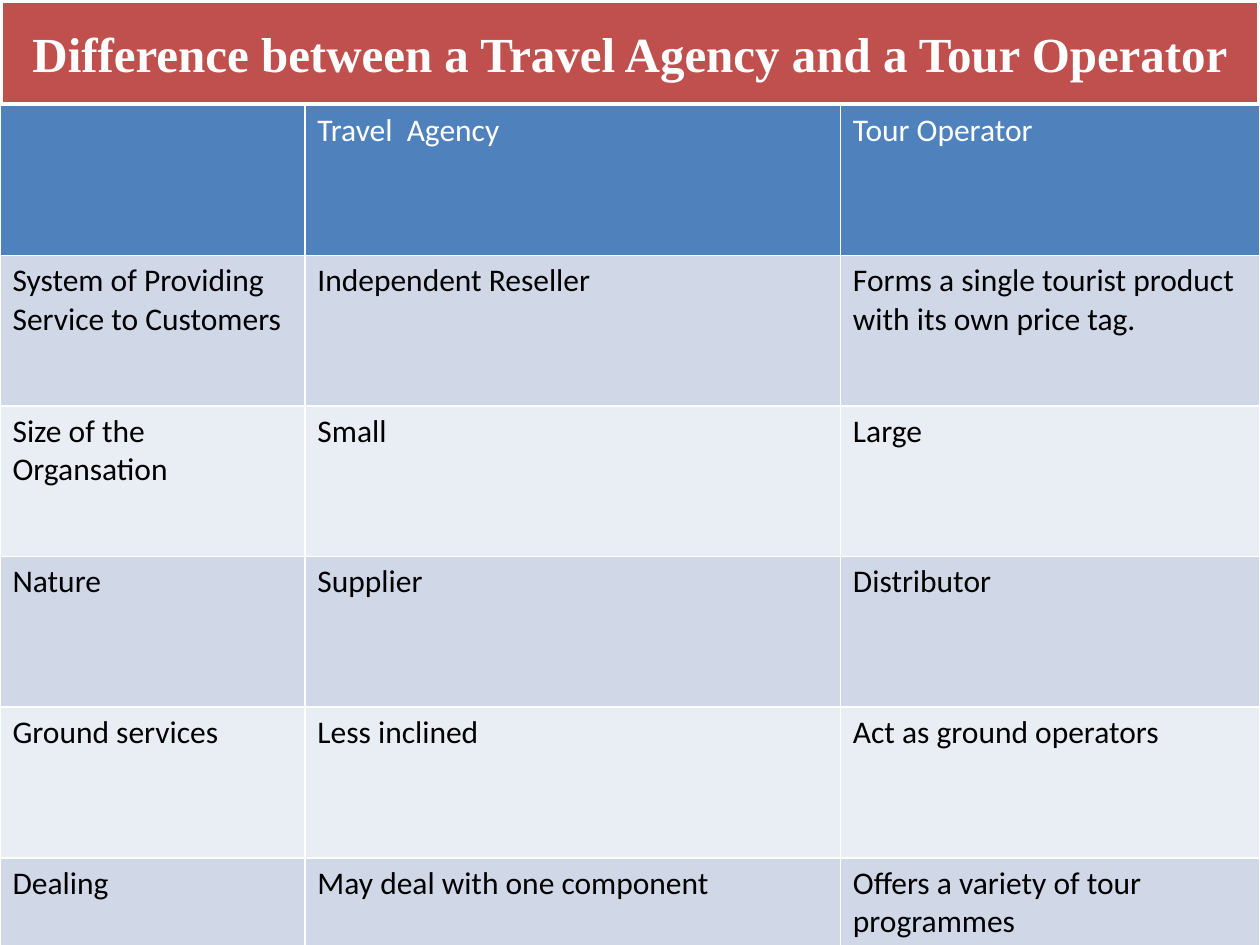
from lxml.etree import SubElement
from pptx import Presentation
from pptx.dml.color import RGBColor
from pptx.enum.shapes import MSO_SHAPE
from pptx.enum.text import MSO_ANCHOR, PP_ALIGN
from pptx.oxml.ns import qn
from pptx.util import Inches, Pt

THEME = {
    "white": RGBColor.from_string("FFFFFF"),
    "black": RGBColor.from_string("000000"),
    "banner": RGBColor.from_string("C0504D"),
    "header": RGBColor.from_string("4F81BD"),
    "bands": [RGBColor.from_string("E9EDF4"), RGBColor.from_string("D0D8E8")],
    "title_font": "Times New Roman",
    "body_font": "Calibri",
    "title_size": Pt(28),
    "body_size": Pt(18),
}

ROWS = [
    ("", "Travel  Agency", "Tour Operator"),
    ("System of Providing Service to Customers", "Independent Reseller",
     "Forms a single tourist product with its own price tag."),
    ("Size of the Organsation", "Small", "Large"),
    ("Nature", "Supplier", "Distributor"),
    ("Ground services", "Less inclined", "Act as ground operators"),
    ("Dealing", "May deal with one component", "Offers a variety of tour programmes"),
]
COLUMN_SHARES = (0.242, 0.425, 0.333)


def write(frame, text, *, font, size, color, bold=False, align=PP_ALIGN.LEFT):
    paragraph = frame.paragraphs[0]
    paragraph.alignment = align
    # The paragraph font also sets the height of an empty cell
    targets = [paragraph.font]
    if text:
        run = paragraph.add_run()
        run.text = text
        targets.append(run.font)
    for target in targets:
        target.name, target.size, target.bold = font, size, bold
        target.color.rgb = color


deck = Presentation()
deck.slide_width, deck.slide_height = Inches(10), Inches(7.5)
slide = deck.slides.add_slide(deck.slide_layouts[6])
width = deck.slide_width
banner_height = deck.slide_height // 9
row_height = Inches(7.17) // len(ROWS)

# Title banner
banner = slide.shapes.add_shape(MSO_SHAPE.RECTANGLE, 0, 0, width, banner_height)
banner.fill.solid()
banner.fill.fore_color.rgb = THEME["banner"]
banner.line.color.rgb = THEME["white"]
banner.line.width = Pt(3)
banner.text_frame.word_wrap = True
banner.text_frame.vertical_anchor = MSO_ANCHOR.MIDDLE
write(banner.text_frame, "Difference between a Travel Agency and a Tour Operator",
      font=THEME["title_font"], size=THEME["title_size"], color=THEME["white"],
      bold=True, align=PP_ALIGN.CENTER)

# Soft shadow below the banner
banner.shadow.inherit = False
effects = banner._element.spPr.find(qn("a:effectLst"))
shadow = SubElement(effects, qn("a:outerShdw"), blurRad=str(Pt(3.1)),
                    dist=str(Pt(1.6)), dir="5400000", rotWithShape="0")
shade = SubElement(shadow, qn("a:srgbClr"), val=str(THEME["black"]))
SubElement(shade, qn("a:alpha"), val="38000")

# Comparison table, running past the foot of the slide
comparison = slide.shapes.add_table(
    len(ROWS), len(COLUMN_SHARES), 0, banner_height, width, row_height * len(ROWS)).table
for column, share in zip(comparison.columns, COLUMN_SHARES):
    column.width = int(width * share)

for row_number, texts in enumerate(ROWS):
    comparison.rows[row_number].height = row_height
    is_header = row_number == 0
    for column_number, text in enumerate(texts):
        cell = comparison.cell(row_number, column_number)
        cell.fill.solid()
        cell.fill.fore_color.rgb = THEME["header"] if is_header else THEME["bands"][row_number % 2]
        write(cell.text_frame, text, font=THEME["body_font"], size=THEME["body_size"],
              color=THEME["white" if is_header else "black"])

deck.save("out.pptx")
